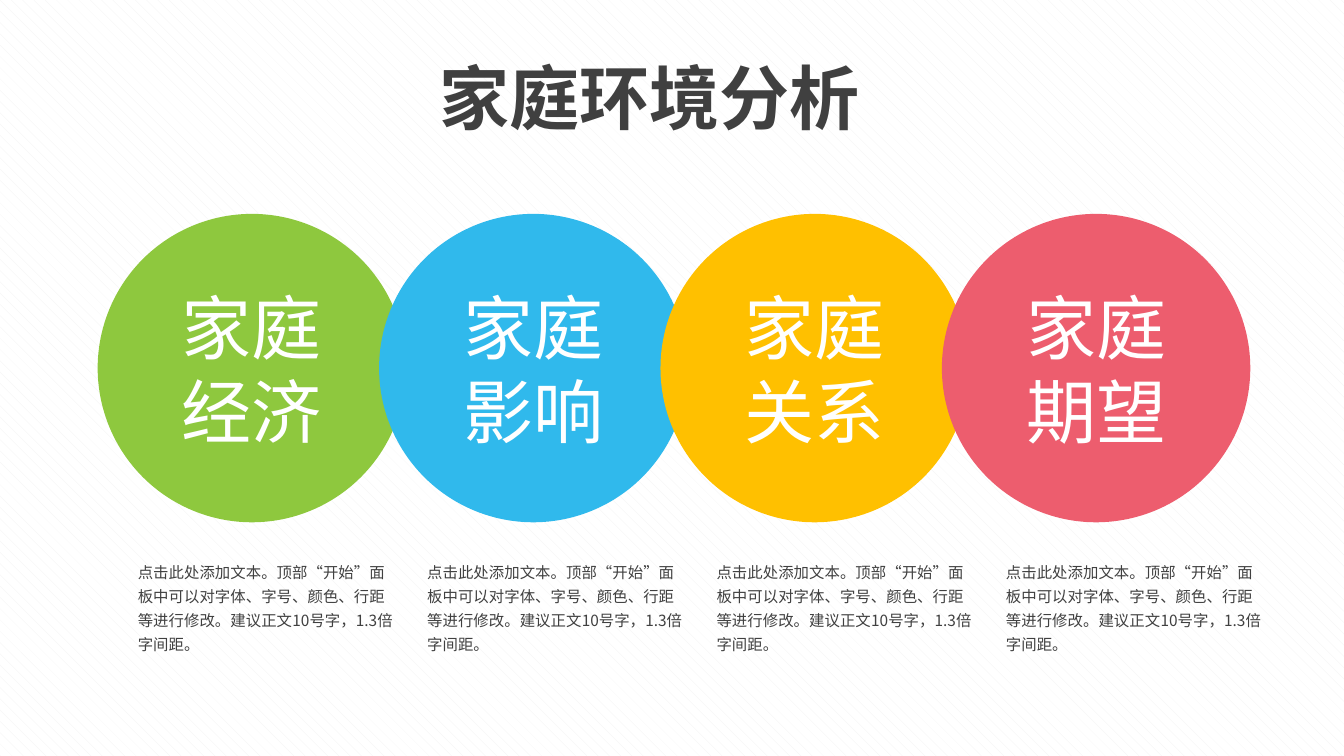
from pptx import Presentation
from pptx.dml.color import RGBColor
from pptx.enum import dml, shapes, text
from pptx.oxml.ns import qn
from pptx.util import Pt

WHITE = RGBColor(0xFF, 0xFF, 0xFF)
STRIPE = RGBColor(0xF2, 0xF2, 0xF2)
DARK = RGBColor(0x40, 0x40, 0x40)
GREEN = RGBColor(0x8E, 0xC8, 0x3E)
BLUE = RGBColor(0x30, 0xB9, 0xEC)
AMBER = RGBColor(0xFF, 0xC0, 0x00)
ROSE = RGBColor(0xED, 0x5D, 0x6E)

CJK = "Noto Sans CJK SC"
LATIN = "TeX Gyre Adventor"
TOPICS = [("经济", GREEN), ("影响", BLUE), ("关系", AMBER), ("期望", ROSE)]
BODY = ("点击此处添加文本。顶部“开始”面板中可以对字体、字号、颜色、行距等进行修改。"
        "建议正文10号字，1.3倍字间距。")


def set_font(p, name, size, color, bold=False):
    """Format a paragraph, with the same CJK font for East Asian text."""
    f = p.font
    f.name, f.size, f.bold = name, Pt(size), bold
    f.color.rgb = color
    latin = f._element.find(qn("a:latin"))
    ea = latin.makeelement(qn("a:ea"), {"typeface": CJK})
    latin.addnext(ea)


def set_background(s):
    """Give the slide its pale shingle pattern."""
    fill = s.background.fill
    fill.patterned()
    fill.pattern = dml.MSO_PATTERN.SHINGLE
    fill.fore_color.rgb = STRIPE
    fill.back_color.rgb = WHITE


def set_title(s, title):
    """Place and format the title."""
    sp = s.shapes.title
    sp.left, sp.top, sp.width, sp.height = Pt(80), Pt(35.3), Pt(767.5), Pt(67.7)
    tf = sp.text_frame
    tf.text = title
    tf.auto_size = text.MSO_AUTO_SIZE.NONE
    tf.vertical_anchor = text.MSO_ANCHOR.TOP
    p = tf.paragraphs[0]
    p.alignment = text.PP_ALIGN.CENTER
    set_font(p, CJK, 50, DARK, bold=True)


def add_circle(s, x, topic, color):
    """Add a coloured circle with a two-line label."""
    sp = s.shapes.add_shape(shapes.MSO_SHAPE.OVAL, Pt(x), Pt(152.8), Pt(220.3), Pt(220.3))
    sp.shadow.inherit = False
    sp.fill.solid()
    sp.fill.fore_color.rgb = color
    sp.line.fill.background()
    tf = sp.text_frame
    tf.margin_left = tf.margin_right = Pt(18)
    tf.margin_top = tf.margin_bottom = Pt(8)
    tf.vertical_anchor = text.MSO_ANCHOR.MIDDLE
    tf.text = "家庭\n" + topic
    for p in tf.paragraphs:
        p.alignment = text.PP_ALIGN.CENTER
        set_font(p, LATIN, 50, WHITE)


def add_body(s, x):
    """Add a description under a circle."""
    tf = s.shapes.add_textbox(Pt(x), Pt(394.6), Pt(197.3), Pt(76.3)).text_frame
    tf.word_wrap = True
    tf.text = BODY
    p = tf.paragraphs[0]
    p.line_spacing = 1.3
    set_font(p, CJK, 11, DARK)


def main():
    """Build the slide and save it."""
    prs = Presentation()
    prs.slide_width, prs.slide_height = Pt(960), Pt(540)
    s = prs.slides.add_slide(prs.slide_layouts[5])
    set_background(s)
    set_title(s, "家庭环境分析")
    for i, (topic, color) in enumerate(TOPICS):
        add_circle(s, 69.8 + 201 * i, topic, color)
    for i in range(len(TOPICS)):
        add_body(s, 91.4 + 206.7 * i)
    prs.save("out.pptx")


if __name__ == "__main__":
    main()
